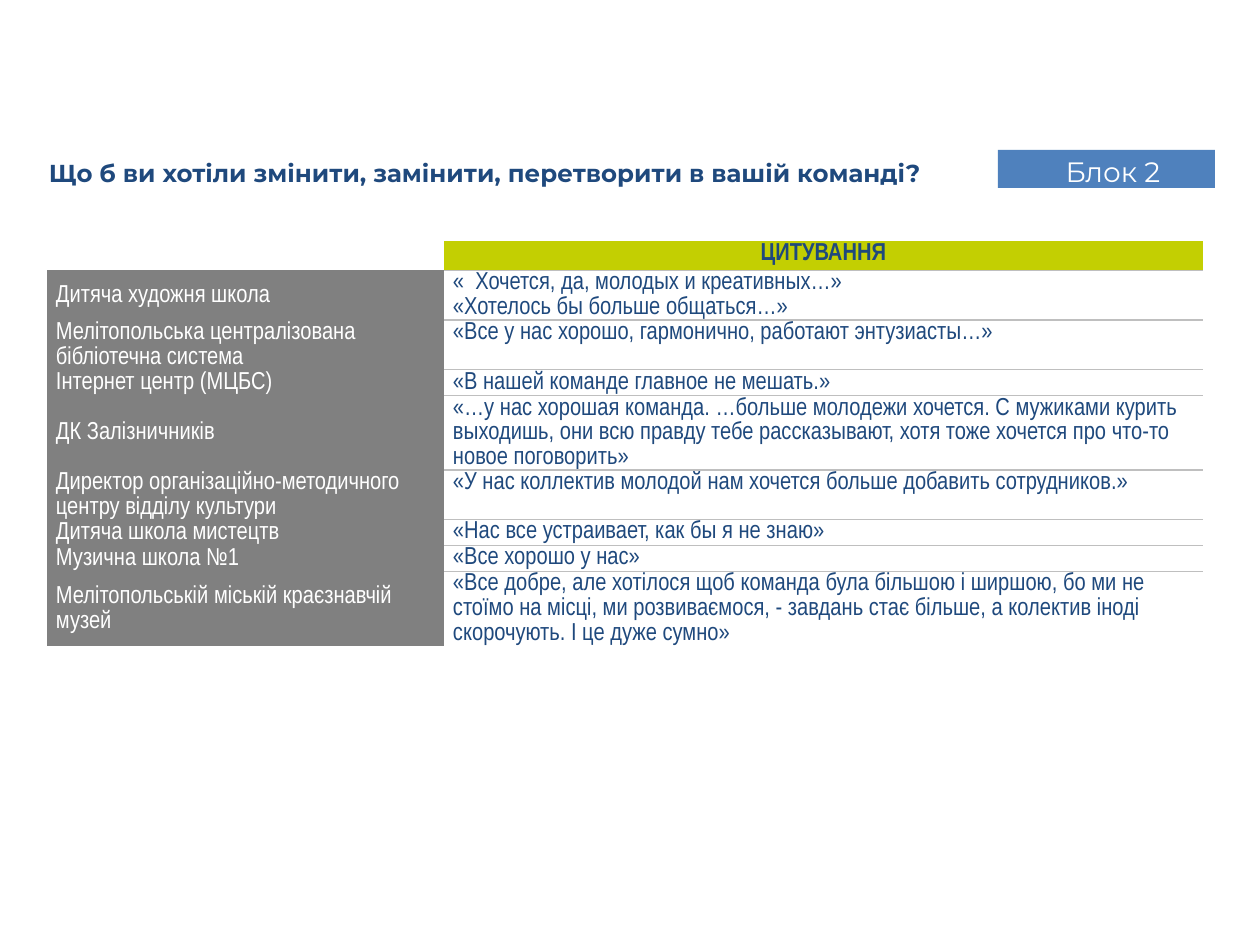
from lxml.etree import SubElement
from pptx import Presentation
from pptx.dml.color import RGBColor
from pptx.enum.shapes import MSO_SHAPE
from pptx.enum.text import MSO_ANCHOR, PP_ALIGN
from pptx.oxml.ns import qn
from pptx.util import Pt

PX = 914400 / 126
NO_GRID = "{2D5ABB26-0587-4C30-8999-92F81FD0307C}"

NAVY, BLUE, LIME = "1F497D", "4F81BD", "C3CF02"
GRAY, RULE, WHITE = "808080", "BFBFBF", "FFFFFF"

QUOTES = [
    ("Дитяча художня школа",
     "«  Хочется, да, молодых и креативных…»\n«Хотелось бы больше общаться…»"),
    ("Мелітопольська централізована бібліотечна система",
     "«Все у нас хорошо, гармонично, работают энтузиасты…»"),
    ("Інтернет центр (МЦБС)", "«В нашей команде главное не мешать.»"),
    ("ДК Залізничників",
     "«…у нас хорошая команда. …больше молодежи хочется. С мужиками курить "
     "выходишь, они всю правду тебе рассказывают, хотя тоже хочется про что-то "
     "новое поговорить»"),
    ("Директор організаційно-методичного центру відділу культури",
     "«У нас коллектив молодой нам хочется больше добавить сотрудников.»"),
    ("Дитяча школа мистецтв", "«Нас все устраивает, как бы я не знаю»"),
    ("Музична школа №1", "«Все хорошо у нас»"),
    ("Мелітопольській міській краєзнавчій музей",
     "«Все добре, але хотілося щоб команда була більшою і ширшою, бо ми не "
     "стоїмо на місці, ми розвиваємося, - завдань стає більше, а колектив іноді "
     "скорочують. І це дуже сумно»"),
]


def px(*lengths):
    return [round(length * PX) for length in lengths]


def rgb(code):
    return RGBColor.from_string(code)


def write(frame, text, font, color, size=14, bold=False,
          align=PP_ALIGN.LEFT, spacing=None):
    """Fill a text frame, one paragraph for each line of text."""
    frame.word_wrap = True
    for index, line in enumerate(text.split("\n")):
        para = frame.add_paragraph() if index else frame.paragraphs[0]
        para.alignment = align
        if spacing:
            para.line_spacing = spacing
        if not line:
            SubElement(para._p, qn("a:endParaRPr"), sz=str(size * 100))
            continue
        run = para.add_run()
        run.text = line
        run.font.name, run.font.size, run.font.bold = font, Pt(size), bold
        run.font.color.rgb = rgb(color)


def set_insets(target, left=0, top=0, right=0, bottom=0):
    (target.margin_left, target.margin_top,
     target.margin_right, target.margin_bottom) = px(left, top, right, bottom)


class SlideBuilder:
    heading_font = "Montserrat"
    table_font = "Arial Narrow"
    table_line = Pt(14.15)

    def __init__(self, slide):
        self.slide = slide

    def title(self, text, box):
        frame = self.slide.shapes.add_textbox(*px(*box)).text_frame
        set_insets(frame, left=2, top=2)
        write(frame, text, self.heading_font, NAVY, bold=True)

    def badge(self, text, box):
        badge = self.slide.shapes.add_shape(MSO_SHAPE.RECTANGLE, *px(*box))
        badge.shadow.inherit = False
        badge.fill.solid()
        badge.fill.fore_color.rgb = rgb(BLUE)
        badge.line.fill.background()
        frame = badge.text_frame
        frame.vertical_anchor = MSO_ANCHOR.TOP
        set_insets(frame, left=13, top=5)
        write(frame, text, self.heading_font, WHITE, size=16,
              align=PP_ALIGN.CENTER)

    def cell(self, cell, text, color, fill=None, edges=(),
             anchor=MSO_ANCHOR.TOP, **style):
        set_insets(cell, left=9, right=9)
        cell.vertical_anchor = anchor
        write(cell.text_frame, text, self.table_font, color,
              spacing=self.table_line, **style)
        for edge in edges:
            line = SubElement(cell._tc.get_or_add_tcPr(), qn(f"a:{edge}"), w="12700")
            SubElement(SubElement(line, qn("a:solidFill")), qn("a:srgbClr"), val=RULE)
        if fill:
            cell.fill.solid()
            cell.fill.fore_color.rgb = rgb(fill)
        else:
            cell.fill.background()

    def quote_table(self, heading, quotes, left, top, widths, row_height):
        count = len(quotes) + 1
        table = self.slide.shapes.add_table(
            count, 2, *px(left, top, sum(widths), row_height * count)).table
        table.first_row = table.horz_banding = False
        table._tbl.tblPr.find(qn("a:tableStyleId")).text = NO_GRID
        for column, width in zip(table.columns, px(*widths)):
            column.width = width

        # Heading row
        self.cell(table.cell(0, 0), "", NAVY, fill=WHITE)
        self.cell(table.cell(0, 1), heading, NAVY, fill=LIME, edges=["lnB"],
                  bold=True, align=PP_ALIGN.CENTER)

        # One row for each institution
        for row, (institution, quote) in enumerate(quotes, 1):
            edges = ["lnT"] if row == len(quotes) else ["lnT", "lnB"]
            self.cell(table.cell(row, 0), institution, WHITE, fill=GRAY,
                      anchor=MSO_ANCHOR.MIDDLE)
            self.cell(table.cell(row, 1), quote, NAVY, edges=edges)


def main():
    deck = Presentation()
    deck.slide_width, deck.slide_height = px(1260, 945)
    builder = SlideBuilder(deck.slides.add_slide(deck.slide_layouts[6]))

    # Question and block number
    builder.title("Що б ви хотіли змінити, замінити, перетворити в вашій команді?",
                  (47, 156, 917, 32))
    builder.badge("Блок 2", (998, 150, 217, 38))

    # Answers
    builder.quote_table("ЦИТУВАННЯ", QUOTES, left=47, top=241,
                        widths=(397, 759), row_height=26)
    deck.save("out.pptx")


if __name__ == "__main__":
    main()
